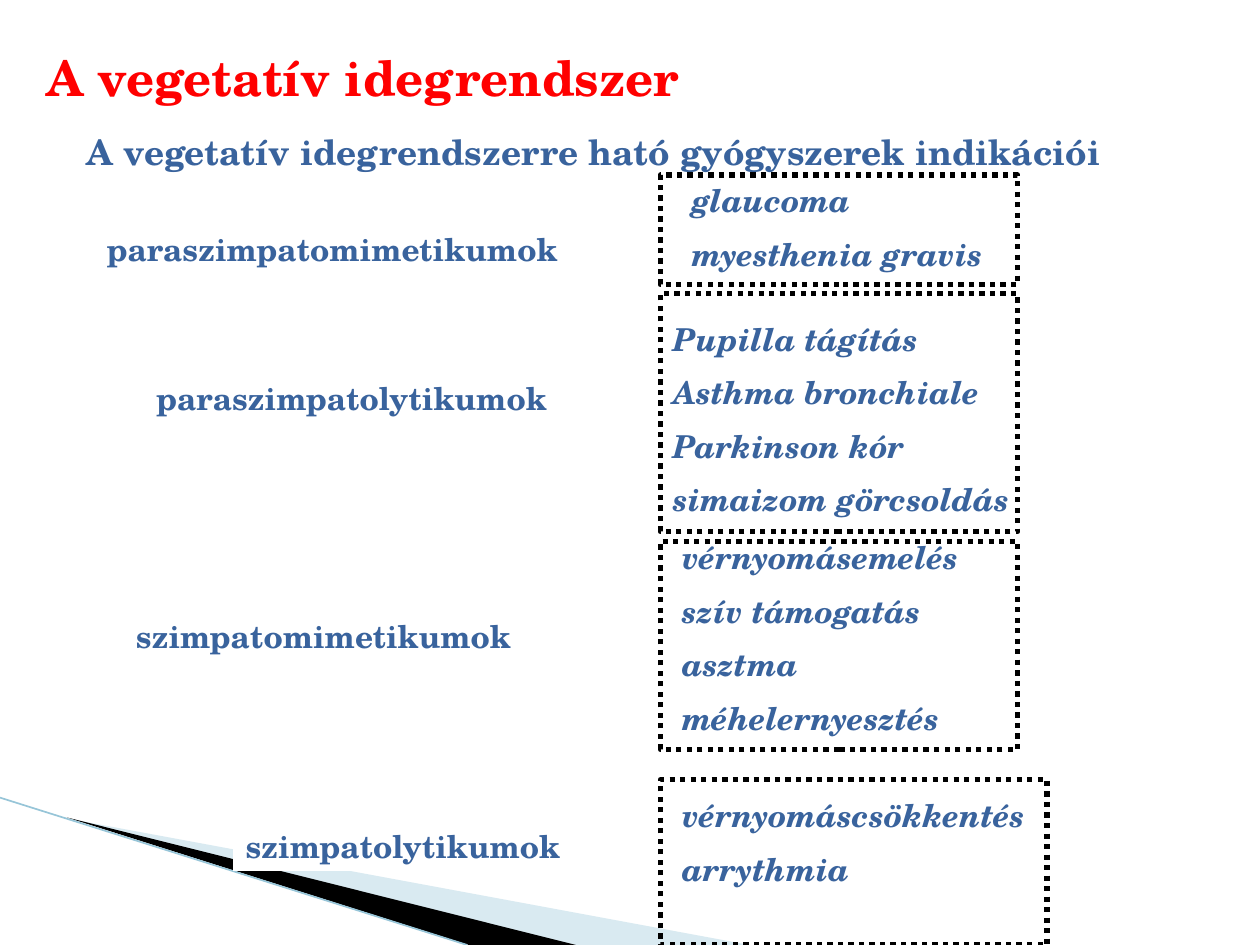
"""Builds the slide on the indications of drugs acting on the vegetative nervous system."""
from lxml.etree import SubElement
from pptx import Presentation
from pptx.dml.color import RGBColor
from pptx.enum.dml import MSO_LINE
from pptx.enum.shapes import MSO_CONNECTOR, MSO_SHAPE
from pptx.enum.text import MSO_ANCHOR, MSO_AUTO_SIZE, PP_ALIGN
from pptx.oxml.ns import qn
from pptx.util import Cm, Pt

COLORS = {"title": "FF0000", "text": "39639D", "black": "000000",
          "white": "FFFFFF", "pale": "A0CBDC", "edge": "97C5D8"}
HEADING = {"size": Pt(28), "bold": True}
SUBHEADING = {"size": Pt(20), "bold": True}
LABEL = {"size": Pt(18), "bold": True}
INDICATION = {**LABEL, "italic": True}

DRUG_GROUPS = [
    ("paraszimpatomimetikumok", (1.9, 4.52, 10.01, 1.02), None,
     ["glaucoma", "myesthenia gravis"],
     (13.69, 3.53, 6.81, 2.18), (13.31, 3.53, 7.21, 2.21)),
    ("paraszimpatolytikumok", (2.9, 7.52, 8.99, 1.02), None,
     ["Pupilla tágítás", "Asthma bronchiale", "Parkinson kór", "simaizom görcsoldás"],
     (13.31, 6.32, 7.8, 6.81), (13.31, 5.92, 7.21, 4.8)),
    ("szimpatomimetikumok", (2.49, 12.32, 8.99, 1.02), None,
     ["vérnyomásemelés", "szív támogatás", "asztma", "méhelernyesztés"],
     (13.49, 10.72, 7.01, 4.5), (13.31, 10.92, 7.21, 4.19)),
    ("szimpatolytikumok", (4.7, 16.54, 8.41, 1.02), "white",
     ["vérnyomáscsökkentés", "arrythmia"],
     (13.49, 15.93, 7.59, 2.18), (13.31, 15.72, 7.8, 3.33)),
]


def rgb(name):
    return RGBColor.from_string(COLORS[name])


class SlideBuilder:
    """Holds the style and the current slide."""

    font_name = "TeX Gyre Schola"

    def __init__(self, slide):
        self.slide = slide
        self.shapes = slide.shapes

    def style(self, paragraph, color, font_format):
        paragraph.alignment = PP_ALIGN.LEFT
        paragraph.font.name = self.font_name
        paragraph.font.color.rgb = rgb(color)
        for attribute, value in font_format.items():
            setattr(paragraph.font, attribute, value)

    def title(self, wording, box):
        heading = self.shapes.title
        heading.left, heading.top, heading.width, heading.height = map(Cm, box)
        heading.text_frame.text = wording
        heading.text_frame.vertical_anchor = MSO_ANCHOR.MIDDLE
        self.style(heading.text_frame.paragraphs[0], "title", HEADING)

    def text(self, lines, box, font_format, fill=None):
        holder = self.shapes.add_textbox(*map(Cm, box))
        frame = holder.text_frame
        frame.word_wrap = True
        frame.auto_size = MSO_AUTO_SIZE.SHAPE_TO_FIT_TEXT
        frame.text = "\n".join(lines)
        for index, paragraph in enumerate(frame.paragraphs):
            if index:
                paragraph.space_before = Pt(9)
            self.style(paragraph, "text", font_format)
        if fill:
            holder.fill.solid()
            holder.fill.fore_color.rgb = rgb(fill)

    def dotted_frame(self, box):
        border = self.shapes.add_shape(MSO_SHAPE.RECTANGLE, *map(Cm, box))
        border.shadow.inherit = False
        border.fill.background()
        border.line.color.rgb = rgb("black")
        border.line.width = Pt(3)
        border.line.dash_style = MSO_LINE.ROUND_DOT

    def wedge(self, corners, color, opacity=100):
        start, *others = [(Cm(x), Cm(y)) for x, y in corners]
        outline = self.shapes.build_freeform(*start)
        outline.add_line_segments(others, close=True)
        wedge = outline.convert_to_shape()
        wedge.shadow.inherit = False
        wedge.line.fill.background()
        wedge.fill.solid()
        wedge.fill.fore_color.rgb = rgb(color)
        if opacity < 100:
            tone = wedge.fill._xPr.find(".//" + qn("a:srgbClr"))
            SubElement(tone, qn("a:alpha"), val=str(opacity * 1000))

    def line(self, start, end, color, width):
        edge = self.shapes.add_connector(MSO_CONNECTOR.STRAIGHT, *map(Cm, start + end))
        edge.line.color.rgb = rgb(color)
        edge.line.width = Pt(width)
        SubElement(edge._element.spPr, qn("a:effectLst"))


def main():
    presentation = Presentation()
    presentation.slide_width, presentation.slide_height = Cm(25.4), Cm(19.05)
    builder = SlideBuilder(presentation.slides.add_slide(presentation.slide_layouts[5]))

    builder.wedge([(1.4, 16.51), (15.11, 19.05), (11.58, 19.05)], "pale", 40)
    builder.wedge([(1.35, 16.48), (11.61, 19.05), (9.45, 19.05)], "black")
    builder.line((0, 16.08), (9.42, 19.05), "edge", 0.95)

    builder.title("A vegetatív idegrendszer", (0.69, 0, 23.22, 3.12))
    for drug, label_box, label_fill, indications, list_box, frame_box in DRUG_GROUPS:
        builder.text([drug], label_box, LABEL, label_fill)
        builder.text(indications, list_box, INDICATION)
        builder.dotted_frame(frame_box)
    builder.text(["A vegetatív idegrendszerre ható gyógyszerek indikációi"],
                 (1.5, 2.51, 22.61, 1.12), SUBHEADING)

    presentation.save("out.pptx")


if __name__ == "__main__":
    main()
